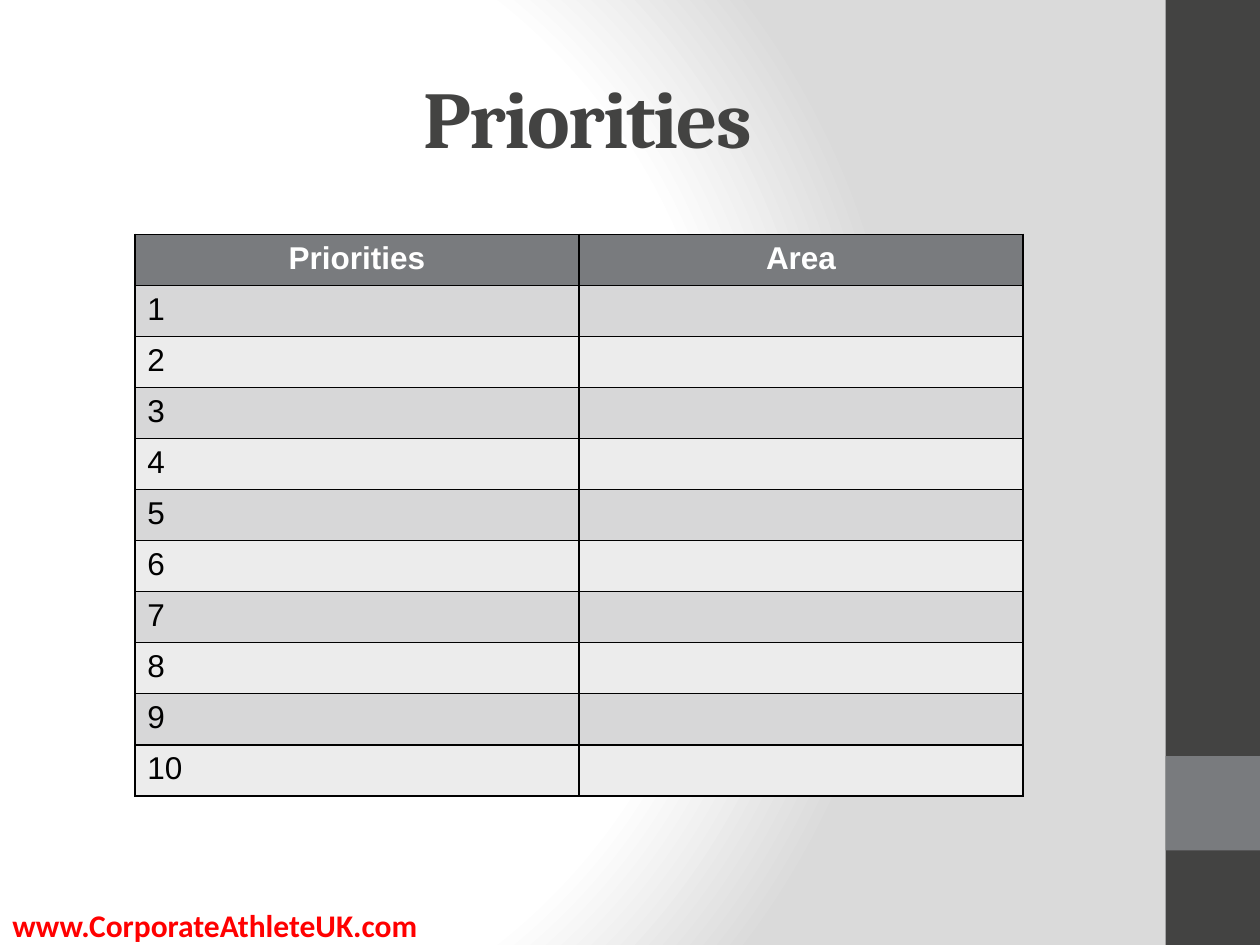
from dataclasses import dataclass

from lxml.etree import SubElement
from pptx import Presentation
from pptx.dml.color import RGBColor
from pptx.enum.shapes import MSO_SHAPE
from pptx.enum.text import MSO_ANCHOR, PP_ALIGN
from pptx.oxml import parse_xml
from pptx.oxml.ns import nsdecls, qn
from pptx.util import Inches, Pt


@dataclass(frozen=True)
class Theme:
    """Colours, fonts and type sizes of the slide."""
    dark: str = "434342"
    grey: str = "797B7E"
    bands: tuple = ("D7D7D8", "ECECEC")
    white: str = "FFFFFF"
    shade: str = "DADADA"
    black: str = "000000"
    red: str = "FF0000"
    title_font: str = "Cambria"
    table_font: str = "Arial"
    link_font: str = "Calibri"
    title_size: int = 46
    body_size: int = 18


THEME = Theme()


def add_run(p, text, font, size, color, bold=False):
    """Add one formatted run to a paragraph."""
    r = p.add_run()
    r.text = text
    r.font.name = font
    r.font.size = Pt(size)
    r.font.bold = bold
    r.font.color.rgb = RGBColor.from_string(color)
    return r


def set_background(s):
    """Fill the background with a circular gradient."""
    s.background.fill.gradient()
    grad = s.element.xpath(".//p:bgPr/a:gradFill")[0]
    stops = ((0, THEME.white), (75, THEME.white), (100, THEME.shade))
    gs = "".join(f'<a:gs pos="{pos * 1000}"><a:srgbClr val="{color}"/></a:gs>'
                 for pos, color in stops)
    grad.getparent().replace(grad, parse_xml(
        f'<a:gradFill {nsdecls("a")} rotWithShape="1"><a:gsLst>{gs}</a:gsLst>'
        '<a:path path="circle"><a:fillToRect l="20000" t="50000" r="100000" b="50000"/>'
        '</a:path></a:gradFill>'))


def add_block(s, left, top, width, height, color):
    """Draw a plain filled rectangle."""
    sp = s.shapes.add_shape(MSO_SHAPE.RECTANGLE, left, top, width, height)
    sp.shadow.inherit = False
    sp.fill.solid()
    sp.fill.fore_color.rgb = RGBColor.from_string(color)
    sp.line.fill.background()


def add_sidebar(s, left, top, width, height):
    """Draw the dark side band with its square accent."""
    add_block(s, left, top, width, height, THEME.dark)
    add_block(s, left, top + height - 2 * width, width, width, THEME.grey)


def add_web_address(s, left, top, width, height):
    """Write the web address at the foot of the slide."""
    tf = s.shapes.add_textbox(left, top, width, height).text_frame
    tf.word_wrap = True
    add_run(tf.paragraphs[0], "www.CorporateAthleteUK.com", THEME.link_font,
            THEME.body_size, THEME.red, True)


def set_title(s, left, top, width, height):
    """Place and format the title placeholder."""
    sp = s.shapes.title
    sp.left, sp.top, sp.width, sp.height = left, top, width, height
    tf = sp.text_frame
    tf.vertical_anchor = MSO_ANCHOR.MIDDLE
    p = tf.paragraphs[0]
    p.alignment = PP_ALIGN.CENTER
    r = add_run(p, "Priorities", THEME.title_font, THEME.title_size, THEME.dark, True)
    r.font._element.set("spc", "-100")


def format_cell(cell, color):
    """Give a cell black borders and a solid fill."""
    tc_pr = cell._tc.get_or_add_tcPr()
    for side in ("a:lnL", "a:lnR", "a:lnT", "a:lnB"):
        ln = SubElement(tc_pr, qn(side), w=str(Pt(1)))
        fill = SubElement(ln, qn("a:solidFill"))
        SubElement(fill, qn("a:srgbClr"), val=THEME.black)
    cell.fill.solid()
    cell.fill.fore_color.rgb = RGBColor.from_string(color)


def add_priorities_table(s, left, top, width, height):
    """Draw the numbered table of priorities and areas."""
    rows = [("Priorities", "Area")] + [(str(n), "") for n in range(1, 11)]
    table = s.shapes.add_table(len(rows), 2, left, top, width, height).table
    for i, texts in enumerate(rows):
        header = i == 0
        table.rows[i].height = height // len(rows)
        for j, text in enumerate(texts):
            cell = table.cell(i, j)
            format_cell(cell, THEME.grey if header else THEME.bands[(i - 1) % 2])
            p = cell.text_frame.paragraphs[0]
            if header:
                p.alignment = PP_ALIGN.CENTER
            if text:
                add_run(p, text, THEME.table_font, THEME.body_size,
                        THEME.white if header else THEME.black, header)


def main():
    """Build the slide and save it."""
    prs = Presentation()
    prs.slide_width, prs.slide_height = Inches(10), Inches(7.5)
    s = prs.slides.add_slide(prs.slide_layouts[5])
    set_background(s)
    add_sidebar(s, Inches(9.25), Inches(0), Inches(0.75), Inches(7.5))
    add_web_address(s, Inches(0), Inches(7.14), Inches(4.45), Inches(0.4))
    set_title(s, Inches(0.5), Inches(0.3), Inches(8.33), Inches(1.25))
    add_priorities_table(s, Inches(1.07), Inches(1.86), Inches(7.05), Inches(4.46))
    prs.save("out.pptx")


if __name__ == "__main__":
    main()
